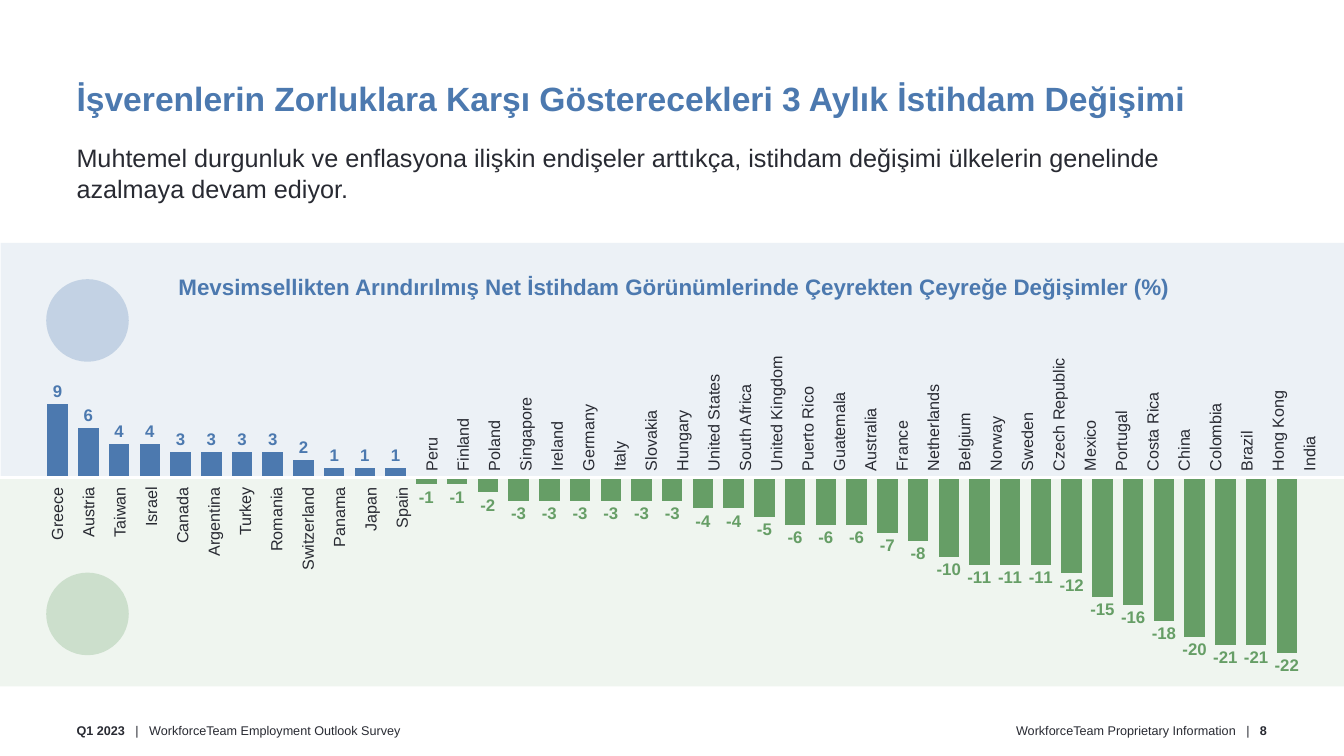
import pptx
import pptx.util
import pptx.chart.data
import pptx.dml.color
import pptx.enum.chart
import pptx.enum.shapes
import pptx.enum.text
import pptx.oxml
import pptx.oxml.ns

Pt = pptx.util.Pt
ALIGN = pptx.enum.text.PP_ALIGN
ANCHOR = pptx.enum.text.MSO_ANCHOR
SHAPE = pptx.enum.shapes.MSO_SHAPE
qn = pptx.oxml.ns.qn

COLORS = {"blue": "4C79AF", "green": "669E66", "ink": "282A32", "white": "FFFFFF"}
PAGE_WIDTH, PAGE_HEIGHT = 960, 540
ZERO_LINE = 341.3

CHANGES = {
    "Greece": 9, "Austria": 6, "Taiwan": 4, "Israel": 4, "Canada": 3, "Argentina": 3,
    "Turkey": 3, "Romania": 3, "Switzerland": 2, "Panama": 1, "Japan": 1, "Spain": 1,
    "Peru": -1, "Finland": -1, "Poland": -2, "Singapore": -3, "Ireland": -3,
    "Germany": -3, "Italy": -3, "Slovakia": -3, "Hungary": -3, "United States": -4,
    "South Africa": -4, "United Kingdom": -5, "Puerto Rico": -6, "Guatemala": -6,
    "Australia": -6, "France": -7, "Netherlands": -8, "Belgium": -10, "Norway": -11,
    "Sweden": -11, "Czech Republic": -11, "Mexico": -12, "Portugal": -15,
    "Costa Rica": -16, "China": -18, "Colombia": -20, "Brazil": -21, "Hong Kong": -21,
    "India": -22,
}


class SlideBuilder:
    font_name = "Arial"

    def __init__(self, page):
        self.page = page

    def color(self, name):
        return pptx.dml.color.RGBColor.from_string(COLORS[name])

    def style(self, font, size, color, bold=False):
        font.name = self.font_name
        font.size = Pt(size)
        font.bold = bold
        font.color.rgb = self.color(color)

    def place(self, box, left, top, width, height):
        box.left, box.top = Pt(left), Pt(top)
        box.width, box.height = Pt(width), Pt(height)

    def fill_text(self, box, paras, size, color, align=ALIGN.LEFT,
                  anchor=ANCHOR.TOP, gap=0):
        """Each paragraph is a list of (text, bold) spans."""
        frame = box.text_frame
        frame.word_wrap = True
        frame.auto_size = pptx.enum.text.MSO_AUTO_SIZE.NONE
        frame.vertical_anchor = anchor
        frame.margin_left = frame.margin_right = 0
        frame.margin_top = frame.margin_bottom = 0
        for index, spans in enumerate(paras):
            para = frame.add_paragraph() if index else frame.paragraphs[0]
            para.alignment = align
            if index:
                para.space_before = Pt(gap)
            for text, bold in spans:
                span = para.add_run()
                span.text = text
                self.style(span.font, size, color, bold)

    def title(self, text, frame, size, color):
        box = self.page.shapes.title
        self.place(box, *frame)
        self.fill_text(box, [[(text, True)]], size, color, anchor=ANCHOR.MIDDLE)

    def text(self, paras, frame, size, color, **layout):
        box = self.page.shapes.add_textbox(*map(Pt, frame))
        self.fill_text(box, paras, size, color, **layout)
        return box

    def upright_labels(self, names, frame, align):
        """Labels turned to read upwards; frame is the area they cover."""
        left, top, width, height = frame
        shift = (width - height) / 2
        box = self.text([[(name, False)] for name in names],
                        (left + shift, top - shift, height, width),
                        11.5, "ink", align=align, gap=8.6)
        box.rotation = 270

    def tint(self, kind, frame, color, opacity):
        shape = self.page.shapes.add_shape(kind, *map(Pt, frame))
        shape.shadow.inherit = False
        shape.fill.solid()
        shape.fill.fore_color.rgb = self.color(color)
        shape.line.fill.background()
        hue = shape.fill._xPr.find(".//" + qn("a:srgbClr"))
        alpha = pptx.oxml.parse_xml(
            f'<a:alpha {pptx.oxml.ns.nsdecls("a")} val="{opacity * 1000}"/>')
        hue.append(alpha)

    def rule(self, left, right, top, color, weight):
        line = self.page.shapes.add_connector(
            pptx.enum.shapes.MSO_CONNECTOR.STRAIGHT,
            Pt(left), Pt(top), Pt(right), Pt(top))
        line.line.color.rgb = self.color(color)
        line.line.width = Pt(weight)
        line._element.spPr.append(pptx.oxml.parse_xml(
            f'<a:effectLst {pptx.oxml.ns.nsdecls("a")}/>'))

    def column_chart(self, values, frame):
        data = pptx.chart.data.CategoryChartData(number_format="General")
        data.categories = [str(number) for number in range(1, len(values) + 1)]
        data.add_series("Series 1", values)
        chart = self.page.shapes.add_chart(
            pptx.enum.chart.XL_CHART_TYPE.COLUMN_CLUSTERED,
            *map(Pt, frame), data).chart
        chart.has_legend = chart.has_title = False
        self.style(chart.font, 10, "ink")

        # Hidden axes with a fixed scale
        chart.category_axis.visible = False
        scale = chart.value_axis
        scale.visible = scale.has_major_gridlines = False
        scale.minimum_scale, scale.maximum_scale = -25, 15

        # Blue columns for growth, green for decline
        plot = chart.plots[0]
        plot.gap_width, plot.overlap = 50, -27
        plot.vary_by_categories = False
        outside = pptx.enum.chart.XL_LABEL_POSITION.OUTSIDE_END
        series = plot.series[0]
        series.invert_if_negative = False
        series.format.fill.solid()
        series.format.fill.fore_color.rgb = self.color("blue")
        labels = series.data_labels
        labels.show_value = True
        labels.position = outside
        self.style(labels.font, 12, "blue", True)
        for index, value in enumerate(values):
            if value < 0:
                point = series.points[index]
                point.format.fill.solid()
                point.format.fill.fore_color.rgb = self.color("green")
                self.style(point.data_label.font, 12, "green", True)
                point.data_label.position = outside

        # Plot area over the full width
        area = chart._chartSpace.chart.plotArea
        for old in area.findall(qn("c:layout")):
            area.remove(old)
        sides = {"x": 0, "y": 0.076, "w": 1, "h": 0.924}
        parts = "".join(f'<c:{side}Mode val="edge"/>' for side in "xy")
        parts += "".join(f'<c:{side} val="{part}"/>' for side, part in sides.items())
        area.insert(0, pptx.oxml.parse_xml(
            f'<c:layout {pptx.oxml.ns.nsdecls("c")}><c:manualLayout>'
            f'<c:layoutTarget val="inner"/>{parts}</c:manualLayout></c:layout>'))


def main():
    deck = pptx.Presentation()
    deck.slide_width, deck.slide_height = Pt(PAGE_WIDTH), Pt(PAGE_HEIGHT)
    slide = SlideBuilder(deck.slides.add_slide(deck.slide_layouts[5]))

    # Heading
    slide.title("İşverenlerin Zorluklara Karşı Gösterecekleri 3 Aylık İstihdam Değişimi",
                (54.7, 52, 898, 36), 24, "blue")
    slide.text([[("Muhtemel durgunluk ve enflasyona ilişkin endişeler arttıkça, istihdam "
                  "değişimi ülkelerin genelinde azalmaya devam ediyor.", False)]],
               (54.7, 102, 850, 43), 18, "ink")

    # Tinted bands, chart and zero line
    slide.tint(SHAPE.RECTANGLE, (0, ZERO_LINE, PAGE_WIDTH, 149), "green", 10)
    slide.tint(SHAPE.RECTANGLE, (0.5, 173.5, PAGE_WIDTH - 0.5, 167), "blue", 10)
    slide.column_chart(list(CHANGES.values()), (30.2, 235.4, 900, 248.4))
    slide.rule(0, PAGE_WIDTH, ZERO_LINE, "white", 2)
    for top, color in ((199.4, "blue"), (409, "green")):
        slide.tint(SHAPE.OVAL, (33, top, 59, 59), color, 25)
    slide.text([[("Mevsimsellikten Arındırılmış Net İstihdam Görünümlerinde Çeyrekten "
                  "Çeyreğe Değişimler (%)", True)]],
               (33, 192.5, 897, 25), 16, "blue", align=ALIGN.CENTER, anchor=ANCHOR.MIDDLE)

    # Country names on the free side of the zero line
    growing = [name for name, change in CHANGES.items() if change > 0]
    falling = [name for name, change in CHANGES.items() if change < 0]
    slide.upright_labels(growing, (33.5, 348, 256, 91), ALIGN.RIGHT)
    slide.upright_labels(falling, (301, 217.5, 630, 119), ALIGN.LEFT)

    # Footer
    slide.text([[("Q1 2023   ", True), ("|   WorkforceTeam Employment Outlook Survey", False)]],
               (54.7, 515.5, 251, 12), 9, "ink", anchor=ANCHOR.MIDDLE)
    slide.text([[("WorkforceTeam Proprietary Information   |   ", False), ("8", True)]],
               (654, 515.5, 251, 12), 9, "ink", align=ALIGN.RIGHT, anchor=ANCHOR.MIDDLE)

    deck.save("out.pptx")


if __name__ == "__main__":
    main()
